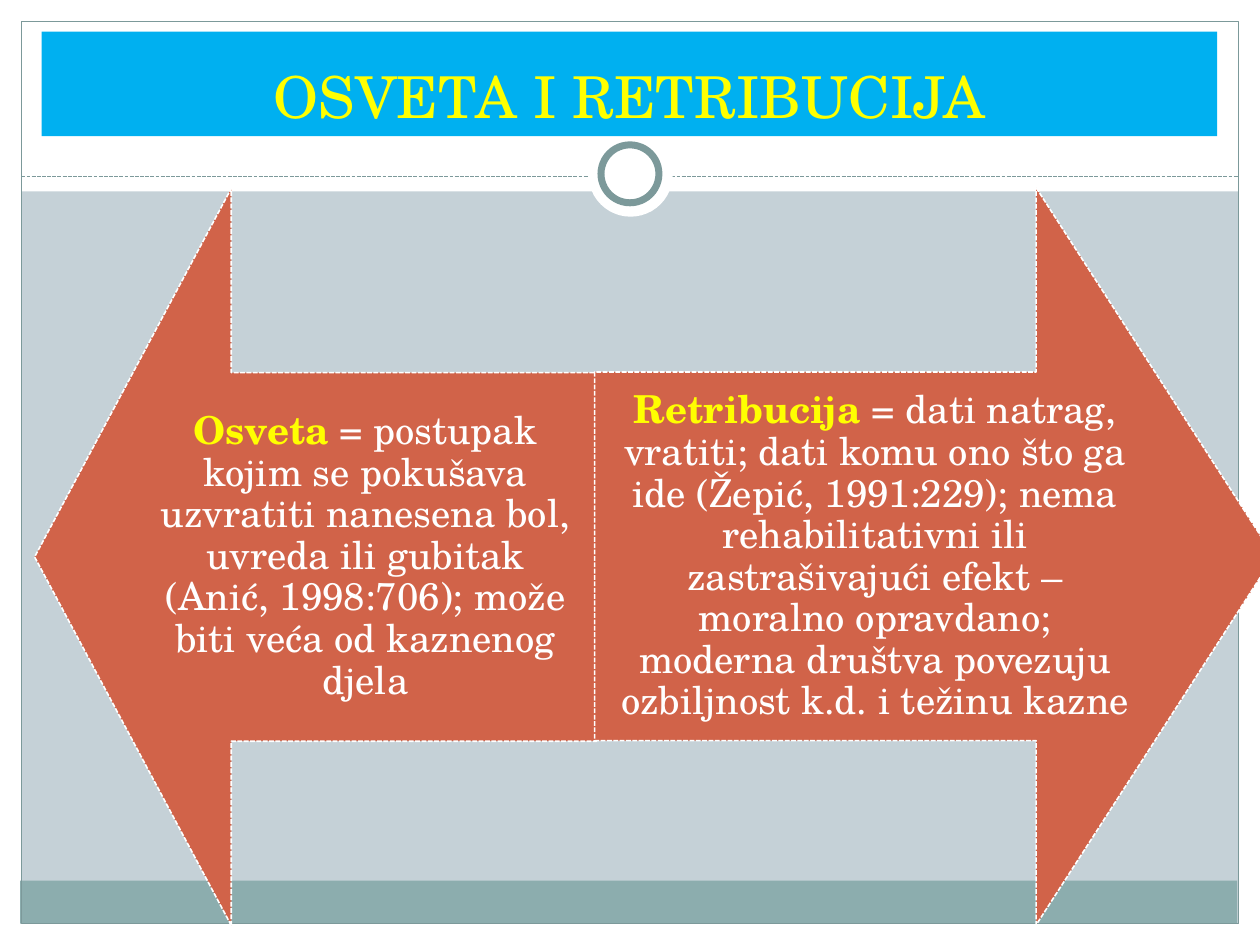
import dataclasses

import pptx
import pptx.dml.color
import pptx.enum.dml
import pptx.enum.shapes
import pptx.enum.text
import pptx.oxml.ns
import pptx.util
from lxml import etree

Inches = pptx.util.Inches
Pt = pptx.util.Pt
SHAPES = pptx.enum.shapes.MSO_SHAPE
ANCHOR = pptx.enum.text.MSO_ANCHOR
DASH = pptx.enum.dml.MSO_LINE.SQUARE_DOT


@dataclasses.dataclass(frozen=True)
class Theme:
    font: str = "TeX Gyre Schola"
    title_size: float = 33
    text_size: float = 22
    backdrop: str = "C5D1D7"
    white: str = "FFFFFF"
    footer: str = "8CADAE"
    frame: str = "7C999A"
    banner: str = "00B0F0"
    highlight: str = "FFFF00"
    arrow: str = "D16349"


THEME = Theme()


def rgb(color):
    return pptx.dml.color.RGBColor.from_string(color)


def paint(fill, color):
    fill.solid()
    fill.fore_color.rgb = rgb(color)


def style_line(line, color, width, dash=None):
    line.color.rgb = rgb(color)
    line.width = Pt(width)
    if dash is not None:
        line.dash_style = dash


def add_figure(slide, kind, box, fill=None, outline=None):
    figure = slide.shapes.add_shape(kind, *map(Inches, box))
    figure.shadow.inherit = False
    if fill:
        paint(figure.fill, fill)
    else:
        figure.fill.background()
    if outline:
        style_line(figure.line, *outline)
    else:
        figure.line.fill.background()
    return figure


def add_divider(slide, left, right, y):
    divider = slide.shapes.add_connector(
        pptx.enum.shapes.MSO_CONNECTOR.STRAIGHT,
        Inches(left), Inches(y), Inches(right), Inches(y))
    style_line(divider.line, THEME.frame, 0.75, DASH)
    etree.SubElement(divider._element.spPr, pptx.oxml.ns.qn("a:effectLst"))


def add_run(paragraph, text, size, color, bold=False):
    run = paragraph.add_run()
    run.text = text
    run.font.name = THEME.font
    run.font.size = Pt(size)
    run.font.bold = bold
    run.font.color.rgb = rgb(color)


def add_frame(slide):
    for band in ((0, 7.33, 10, 0.17), (0, 0, 10, 1.52),
                 (0, 0, 0.17, 7.5), (9.83, 0, 0.17, 7.5)):
        add_figure(slide, SHAPES.RECTANGLE, band, THEME.white)
    add_figure(slide, SHAPES.RECTANGLE, (0.16, 6.99, 9.66, 0.34), THEME.footer)
    add_figure(slide, SHAPES.RECTANGLE, (0.17, 0.17, 9.66, 7.16),
               outline=(THEME.frame, 0.75))
    add_divider(slide, 0.17, 9.83, 1.4)
    add_figure(slide, SHAPES.OVAL, (4.67, 1.05, 0.67, 0.67), THEME.white)
    add_figure(slide, SHAPES.OVAL, (4.77, 1.15, 0.46, 0.46), THEME.white,
               (THEME.frame, 4))


def set_title(slide, text):
    title = slide.shapes.title
    slide.shapes._spTree.append(title._element)
    title.left, title.top, title.width, title.height = map(
        Inches, (0.33, 0.25, 9.33, 0.83))
    paint(title.fill, THEME.banner)
    frame = title.text_frame
    frame.auto_size = pptx.enum.text.MSO_AUTO_SIZE.NONE
    frame.vertical_anchor = ANCHOR.BOTTOM
    heading = frame.paragraphs[0]
    heading.alignment = pptx.enum.text.PP_ALIGN.CENTER
    add_run(heading, text, THEME.title_size, THEME.highlight)


def add_arrow(slide, box, rotation):
    arrow = add_figure(slide, SHAPES.UP_ARROW, box, THEME.arrow,
                       (THEME.white, 0.9, DASH))
    arrow.rotation = rotation
    arrow.adjustments[0] = 0.5
    arrow.adjustments[1] = 0.35


def add_definition(slide, left, width, term, meaning):
    definition = slide.shapes.add_textbox(
        *map(Inches, (left, 2.96, width, 2.92)))
    frame = definition.text_frame
    frame.word_wrap = True
    frame.vertical_anchor = ANCHOR.MIDDLE
    frame.margin_left = frame.margin_right = Inches(0.17)
    frame.margin_top = frame.margin_bottom = Inches(0.17)
    paragraph = frame.paragraphs[0]
    paragraph.alignment = pptx.enum.text.PP_ALIGN.CENTER
    paragraph.line_spacing = 0.9
    add_run(paragraph, term, THEME.text_size, THEME.highlight, bold=True)
    add_run(paragraph, meaning, THEME.text_size, THEME.white)


def main():
    deck = pptx.Presentation()
    deck.slide_width, deck.slide_height = Inches(10), Inches(7.5)
    slide = deck.slides.add_slide(deck.slide_layouts[5])
    paint(slide.background.fill, THEME.backdrop)
    add_frame(slide)
    set_title(slide, "OSVETA I RETRIBUCIJA")
    add_arrow(slide, (-0.42, 2.19, 5.85, 4.46), 270)
    add_definition(
        slide, 1.06, 3.68, "Osveta",
        " = postupak kojim se pokušava uzvratiti nanesena bol, uvreda ili "
        "gubitak (Anić, 1998:706); može biti veća od kaznenog djela")
    add_arrow(slide, (4.49, 1.72, 5.85, 5.39), 90)
    add_definition(
        slide, 4.72, 4.45, "Retribucija",
        " = dati natrag, vratiti; dati komu ono što ga ide (Žepić, 1991:229); "
        "nema rehabilitativni ili zastrašivajući efekt – moralno opravdano; "
        "moderna društva povezuju ozbiljnost k.d. i težinu kazne")
    deck.save("out.pptx")


if __name__ == "__main__":
    main()
